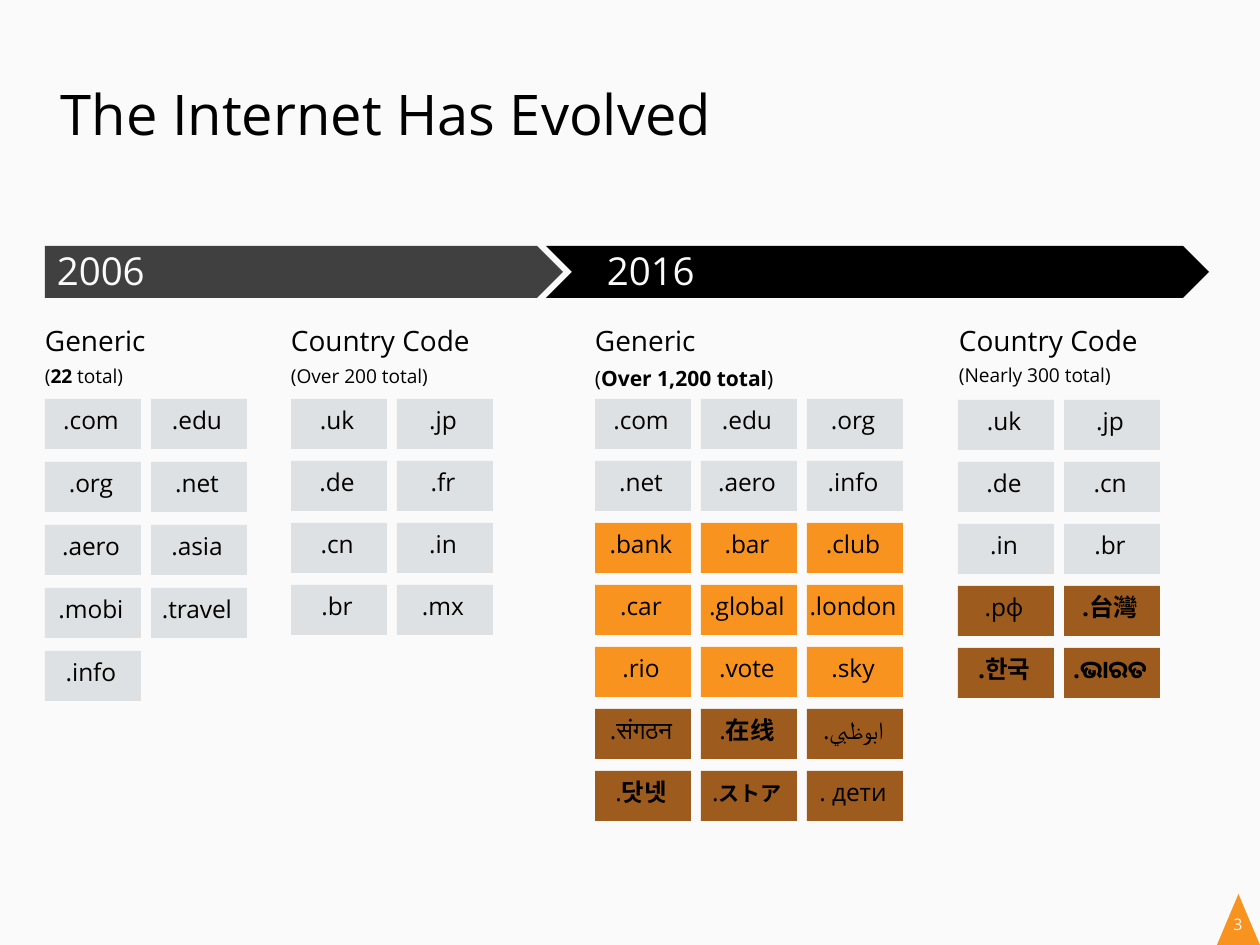
from lxml.etree import SubElement
from pptx import Presentation
from pptx.dml.color import RGBColor
from pptx.enum.shapes import MSO_SHAPE as Shape
from pptx.enum.text import MSO_ANCHOR as Anchor, PP_ALIGN as Align
from pptx.oxml.ns import qn
from pptx.util import Emu, Pt

BLACK, CHARCOAL, PAPER = "000000", "404040", "FAFAFA"
GREY, ORANGE, BROWN = "DEE1E3", "F7931E", "9D5B1E"
BODY_FONT, ASIAN_FONT = "Open Sans", "Noto Sans CJK SC"


def px(count):
    return Emu(round(count * 914400 / 168))


def rgb(value):
    return RGBColor.from_string(value)


def add_span(para, text, size=10.5, color=BLACK, bold=False, font=BODY_FONT):
    span = para.add_run()
    span.text = text
    span.font.size = Pt(size)
    span.font.bold = bold
    span.font.color.rgb = rgb(color)
    span.font.name = font
    if font != BODY_FONT:
        SubElement(span.font._element, qn("a:ea"), typeface=font)


class SlideBuilder:
    def __init__(self, deck):
        self.page = deck.slides.add_slide(deck.slide_layouts[5])
        self.page.background.fill.solid()
        self.page.background.fill.fore_color.rgb = rgb(PAPER)

    def frame(self, box, insets, wrap=True):
        frame = box.text_frame
        frame.word_wrap = wrap
        frame.vertical_anchor = Anchor.TOP
        (frame.margin_left, frame.margin_top,
         frame.margin_right, frame.margin_bottom) = map(px, insets)
        return frame

    def title(self, text, left, top, width, height):
        box = self.page.shapes.title
        box.left, box.top, box.width, box.height = map(px, (left, top, width, height))
        para = self.frame(box, (16, 4, 16, 0)).paragraphs[0]
        para.alignment = Align.LEFT
        add_span(para, text, size=24)

    def shape(self, kind, left, top, width, height, color):
        shape = self.page.shapes.add_shape(kind, *map(px, (left, top, width, height)))
        shape.shadow.inherit = False
        shape.fill.solid()
        shape.fill.fore_color.rgb = rgb(color)
        shape.line.fill.background()
        return shape

    def label(self, lines, left, top, width, height, insets, spacing=1.0,
              align=Align.LEFT, wrap=True):
        box = self.page.shapes.add_textbox(*map(px, (left, top, width, height)))
        frame = self.frame(box, insets, wrap)
        for index, spans in enumerate(lines):
            para = frame.add_paragraph() if index else frame.paragraphs[0]
            para.alignment = align
            para.line_spacing = spacing
            for text, style in spans:
                add_span(para, text, **style)

    def year(self, text, left):
        self.label([[(text, dict(size=16.5, color=PAPER))]],
                   left, 242, 126, 64, (12, 5, 16, 5))

    def heading(self, name, total, left, top):
        self.label([[(name, dict(size=12))], total],
                   left, top, 300, 91, (0, 5, 16, 5), spacing=1.3)

    def tile(self, spans, left, top, color):
        tile = self.shape(Shape.RECTANGLE, left, top, 96, 50, color)
        para = self.frame(tile, (12, 6, 16, 6), wrap=False).paragraphs[0]
        para.alignment = Align.CENTER
        for text, style in [(spans, {})] if isinstance(spans, str) else spans:
            add_span(para, text, **style)

    def tile_grid(self, rows, left, top, row_pitch):
        for row, (color, names) in enumerate(rows):
            for column, name in enumerate(names):
                self.tile(name, left + 106 * column, top + row_pitch * row, color)


deck = Presentation()
deck.slide_width, deck.slide_height = px(1260), px(945)
slide = SlideBuilder(deck)

# Slide number
slide.shape(Shape.ISOSCELES_TRIANGLE, 1217, 894, 43, 51, ORANGE)
slide.label([[("3", dict(size=6.8, color=PAPER))]], 1228, 915, 20, 19,
            (0, 0, 0, 0), align=Align.CENTER, wrap=False)

# Title and timeline
slide.title("The Internet Has Evolved", 45, 76, 1164, 79)
slide.shape(Shape.CHEVRON, 546, 246, 663, 52, BLACK)
slide.shape(Shape.PENTAGON, 45, 246, 518, 52, CHARCOAL)
slide.year("2006", 45)
slide.year("2016", 595)

# Group headings
small, medium = dict(size=8.2), dict(size=9)
slide.heading("Generic", [("(", small), ("22", dict(size=8.2, bold=True)),
                          (" total)", small)], 45, 309)
slide.heading("Country Code", [("(Over 200 total)", small)], 291, 309)
slide.heading("Generic", [("(", medium), ("Over 1,200 total", dict(size=9, bold=True)),
                          (")", medium)], 595, 309)
slide.heading("Country Code", [("(Nearly 300 total)", small)], 959, 308)

# Domain tiles of 2006
slide.tile_grid([
    (GREY, [".com", ".edu"]),
    (GREY, [".org", ".net"]),
    (GREY, [".aero", ".asia"]),
    (GREY, [".mobi", ".travel"]),
    (GREY, [".info"]),
], 45, 399, 63)
slide.tile_grid([
    (GREY, [".uk", ".jp"]),
    (GREY, [".de", ".fr"]),
    (GREY, [".cn", ".in"]),
    (GREY, [".br", ".mx"]),
], 291, 399, 62)

# Domain tiles of 2016
bold = dict(bold=True)
asian = dict(bold=True, font=ASIAN_FONT)
slide.tile_grid([
    (GREY, [".com", ".edu", ".org"]),
    (GREY, [".net", ".aero", ".info"]),
    (ORANGE, [".bank", ".bar", ".club"]),
    (ORANGE, [".car", ".global", ".london"]),
    (ORANGE, [".rio", ".vote", ".sky"]),
    (BROWN, [".संगठन", [(".", {}), ("在线", asian)], ".ابوظبي"]),
    (BROWN, [[(".", {}), ("닷넷", asian)],
             [(".", {}), ("ストア", dict(size=9, bold=True, font="Lato"))],
             ". дети"]),
], 595, 399, 62)
slide.tile_grid([
    (GREY, [".uk", ".jp"]),
    (GREY, [".de", ".cn"]),
    (GREY, [".in", ".br"]),
    (BROWN, [".рф", [(".", bold), ("台灣", asian)]]),
    (BROWN, [[(".한국", bold)], [(".ଭାରତ", bold)]]),
], 958, 400, 62)

deck.save("out.pptx")
